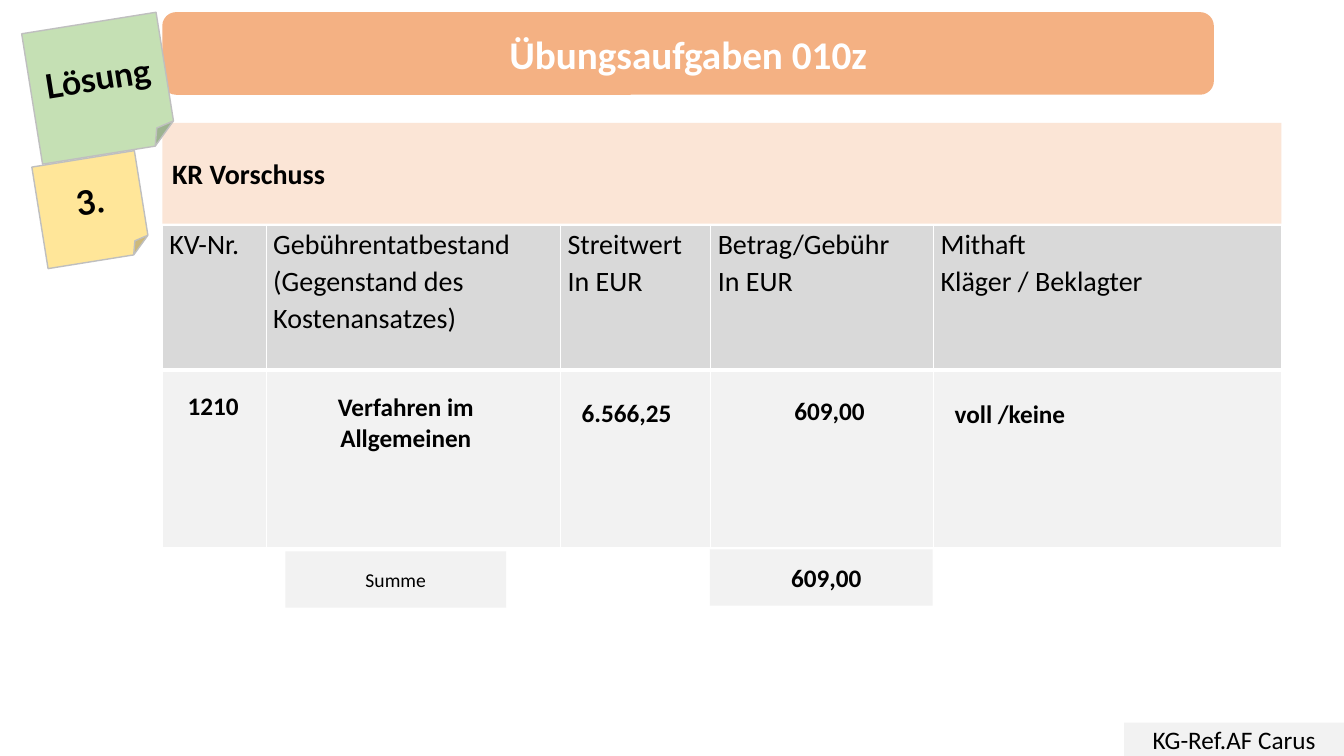
from lxml.etree import SubElement
from pptx import Presentation
from pptx.dml.color import RGBColor as RGB
from pptx.enum.shapes import MSO_SHAPE as SHAPE
from pptx.enum.text import MSO_ANCHOR as ANCHOR, PP_ALIGN as ALIGN
from pptx.oxml.ns import qn
from pptx.util import Inches, Pt

BLACK = RGB(0, 0, 0)
WHITE = RGB(255, 255, 255)
ORANGE = RGB(0xF4, 0xB1, 0x83)
PEACH = RGB(0xFB, 0xE5, 0xD6)
GREEN = RGB(0xC5, 0xE0, 0xB4)
YELLOW = RGB(0xFF, 0xE6, 0x99)
SILVER = RGB(0xBF, 0xBF, 0xBF)
GRAY = RGB(0xD9, 0xD9, 0xD9)
PALE = RGB(0xF2, 0xF2, 0xF2)

LEFT, TOP = 1.61, 2.24
COLS = [1.03, 2.92, 1.49, 2.21, 3.45]
ROWS = [1.43, 1.76]
WIDE = sum(COLS)
HEADS = [
    ["KV-Nr."],
    ["Gebührentatbestand", "(Gegenstand des Kostenansatzes)"],
    ["Streitwert", "In EUR"],
    ["Betrag/Gebühr", "In EUR"],
    ["Mithaft", "Kläger / Beklagter"],
]
TITLE = ("Übungsaufgaben 010z", (LEFT, 0.12, 10.43, 0.82))
BAND = ("KR Vorschuss", (LEFT, 1.22, WIDE, 1))
DONE = ("Lösung", (0.31, 0.22, 1.35, 1.31), GREEN)
TASK = ("3.", (0.39, 1.57, 1.03, 1.02), YELLOW)
FOOT = ("KG-Ref.AF Carus", (11.15, 7.17, 2.18, 0.33))
NUMBER = ("1210", (1.67, 3.85, 0.89, 0.35))
VALUES = [
    ("6.566,25", (5.67, 3.88, 1.26, 0.41)),
    ("609,00", (7.78, 3.77, 1, 0.58)),
    ("voll /keine", (9.37, 3.83, 3.28, 0.52)),
]
SUM = ("Summe", (2.83, 5.47, 2.19, 0.56))
TOTAL = ("609,00", (7.04, 5.45, 2.21, 0.56))
FACT = ("Verfahren im Allgemeinen", (2.83, 3.84, 2.39, 0.69))

deck = Presentation()
deck.slide_width, deck.slide_height = Inches(13.33), Inches(7.5)
slide = deck.slides.add_slide(deck.slide_layouts[6])


def write(para, text, size, color=BLACK, bold=False, face="Calibri"):
    run = para.add_run()
    run.text = text
    font = run.font
    font.name, font.size, font.bold = face, Pt(size), bold
    font.color.rgb = color


def add_box(text, box, fill=PALE, size=18, color=BLACK, bold=True,
            align=ALIGN.CENTER, face="Calibri", kind=SHAPE.RECTANGLE):
    shape = slide.shapes.add_shape(kind, *map(Inches, box))
    shape.shadow.inherit = False
    shape.fill.solid()
    shape.fill.fore_color.rgb = fill
    shape.line.fill.background()
    frame = shape.text_frame
    frame.word_wrap = True
    frame.vertical_anchor = ANCHOR.MIDDLE
    para = frame.paragraphs[0]
    para.alignment = align
    write(para, text, size, color, bold, face)
    return shape


def add_note(text, box, fill):
    note = add_box(text, box, fill, 24, face="Lato", kind=SHAPE.FOLDED_CORNER)
    note.rotation = 350.9
    note.line.color.rgb = SILVER
    note.line.width = Pt(1)


def paint(cell, fill, base):
    props = cell._tc.get_or_add_tcPr()
    for side, width in (("L", 1), ("R", 1), ("T", 1), ("B", base)):
        edge = SubElement(props, qn(f"a:ln{side}"), w=str(Pt(width)))
        solid = SubElement(edge, qn("a:solidFill"))
        SubElement(solid, qn("a:srgbClr"), val=str(WHITE))
    cell.fill.solid()
    cell.fill.fore_color.rgb = fill


def add_grid():
    box = map(Inches, (LEFT, TOP, WIDE, sum(ROWS)))
    grid = slide.shapes.add_table(len(ROWS), len(COLS), *box).table
    for row, high in zip(grid.rows, ROWS):
        row.height = Inches(high)
    for i, (wide, lines) in enumerate(zip(COLS, HEADS)):
        grid.columns[i].width = Inches(wide)
        head = grid.cell(0, i)
        paint(head, GRAY, 3)
        paint(grid.cell(1, i), PALE, 1)
        head.margin_left = head.margin_right = Inches(0.07)
        head.margin_top = head.margin_bottom = 0
        frame = head.text_frame
        for j, line in enumerate(lines):
            para = frame.add_paragraph() if j else frame.paragraphs[0]
            para.line_spacing = 1.07
            write(para, line, 20)


add_grid()
add_box(*TITLE, ORANGE, 28, WHITE, kind=SHAPE.ROUNDED_RECTANGLE)
add_box(*BAND, PEACH, 20, align=ALIGN.LEFT)
add_note(*DONE)
add_box(*FOOT, bold=False)
add_box(*NUMBER)
for text, box in VALUES:
    value = add_box(text, box, align=ALIGN.LEFT)
    value.text_frame.paragraphs[0].line_spacing = 1.07
add_note(*TASK)
add_box(*SUM, size=14, bold=False)
total = add_box(*TOTAL)
total.text_frame.margin_left = Inches(0.2)
add_box(*FACT)

deck.save("out.pptx")
